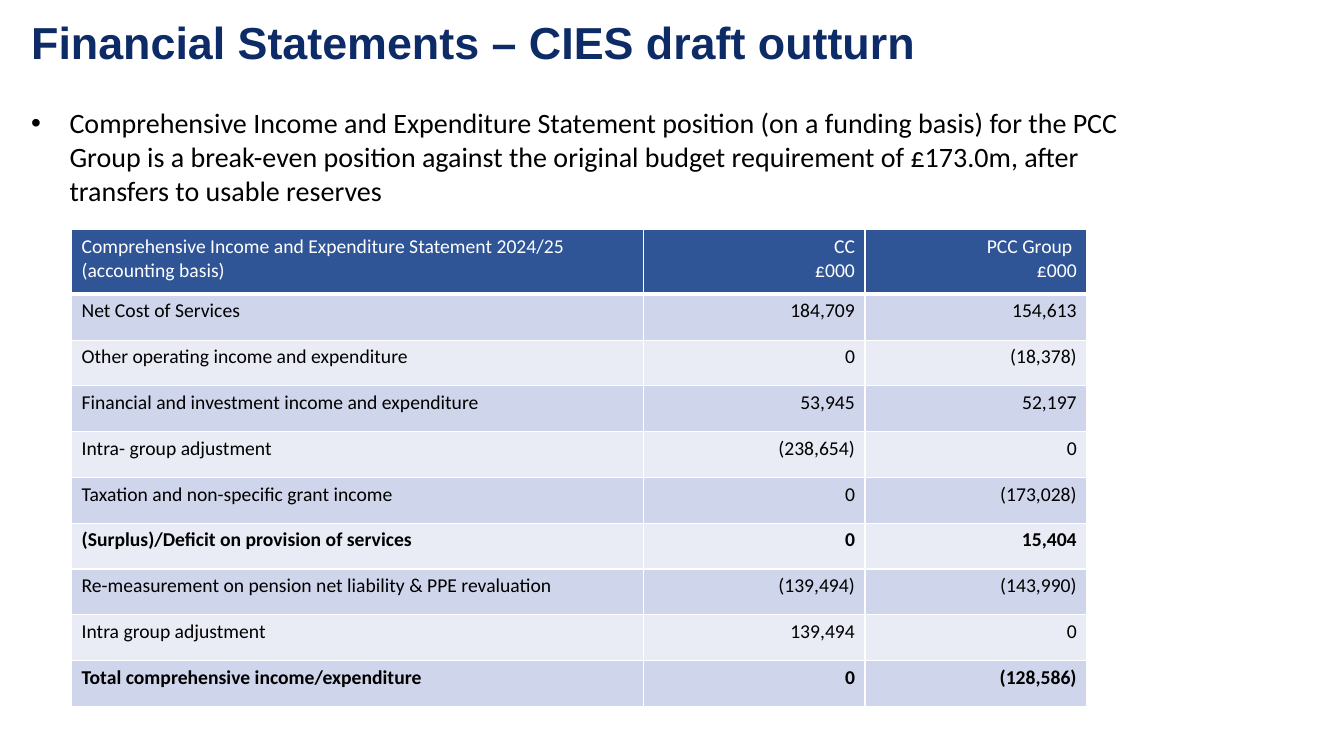
"""Build the CIES draft outturn slide with its income and expenditure table."""
from lxml.etree import SubElement
from pptx import Presentation
from pptx.dml.color import RGBColor
from pptx.enum.text import MSO_ANCHOR as Anchor, MSO_AUTO_SIZE as AutoSize, PP_ALIGN as Align
from pptx.oxml.ns import qn
from pptx.util import Inches, Pt


def color(value):
    return RGBColor.from_string(value)


def write(frame, text, size=14, font="Calibri", ink="000000", bold=False, align=Align.LEFT, spacing=1.0):
    frame.text = text
    for paragraph in frame.paragraphs:
        paragraph.alignment = align
        paragraph.line_spacing = spacing
        paragraph.space_before = Pt(0)
        for run in paragraph.runs:
            run.font.size = Pt(size)
            run.font.name = font
            run.font.bold = bold
            run.font.color.rgb = color(ink)


COLUMN_WIDTHS = [5.67, 2.2, 2.2]
HEADER_HEIGHT, TABLE_HEIGHT = 0.64, 4.73
HEADER_FILL, BAND_FILLS = "2F5597", ["E9EBF5", "CFD5EA"]
ROWS = [
    ("Comprehensive Income and Expenditure Statement 2024/25 (accounting basis)", "CC\n£000", "PCC Group \n£000"),
    ("Net Cost of Services", "184,709", "154,613"),
    ("Other operating income and expenditure", "0", "(18,378)"),
    ("Financial and investment income and expenditure", "53,945", "52,197"),
    ("Intra- group adjustment", "(238,654)", "0"),
    ("Taxation and non-specific grant income", "0", "(173,028)"),
    ("(Surplus)/Deficit on provision of services", "0", "15,404"),
    ("Re-measurement on pension net liability & PPE revaluation", "(139,494)", "(143,990)"),
    ("Intra group adjustment", "139,494", "0"),
    ("Total comprehensive income/expenditure", "0", "(128,586)"),
]
TOTAL_ROWS = {6, 9}

presentation = Presentation()
presentation.slide_width, presentation.slide_height = Inches(13.33), Inches(7.5)
slide = presentation.slides.add_slide(presentation.slide_layouts[1])
title, body = slide.placeholders

title.left, title.top, title.width, title.height = map(Inches, (0.21, 0.13, 11.04, 0.64))
title.text_frame.vertical_anchor = Anchor.MIDDLE
title.text_frame.auto_size = AutoSize.NONE
write(title.text_frame, "Financial Statements – CIES draft outturn",
      size=32, font="Arial", ink="0D2B67", bold=True, spacing=0.9)

body.left, body.top, body.width, body.height = map(Inches, (0.21, 1, 11.03, 1.11))
body.text_frame.vertical_anchor = Anchor.TOP
body.text_frame.auto_size = AutoSize.SHAPE_TO_FIT_TEXT
write(body.text_frame,
      "Comprehensive Income and Expenditure Statement position (on a funding basis) for the PCC Group "
      "is a break-even position against the original budget requirement of £173.0m, "
      "after transfers to usable reserves", size=20)
bullet_properties = body.text_frame.paragraphs[0]._p.get_or_add_pPr()
bullet_properties.set("marL", str(Inches(0.38)))
bullet_properties.set("indent", str(-Inches(0.38)))
SubElement(bullet_properties, qn("a:buFont"), typeface="Arial")
SubElement(bullet_properties, qn("a:buChar"), char="•")

table = slide.shapes.add_table(len(ROWS), len(COLUMN_WIDTHS), Inches(0.71), Inches(2.28),
                               Inches(sum(COLUMN_WIDTHS)), Inches(TABLE_HEIGHT)).table
for column, width in zip(table.columns, COLUMN_WIDTHS):
    column.width = Inches(width)

for row_index, values in enumerate(ROWS):
    header = row_index == 0
    body_height = (TABLE_HEIGHT - HEADER_HEIGHT) / (len(ROWS) - 1)
    table.rows[row_index].height = Inches(HEADER_HEIGHT if header else body_height)
    for column_index, text in enumerate(values):
        cell = table.cell(row_index, column_index)
        write(cell.text_frame, text, ink="FFFFFF" if header else "000000",
              bold=row_index in TOTAL_ROWS, align=Align.RIGHT if column_index else Align.LEFT)
        cell_properties = cell._tc.get_or_add_tcPr()
        for side in ("lnL", "lnR", "lnT", "lnB"):
            thickness = Pt(3 if header and side == "lnB" else 1)
            border = SubElement(cell_properties, qn(f"a:{side}"), w=str(thickness))
            SubElement(SubElement(border, qn("a:solidFill")), qn("a:srgbClr"), val="FFFFFF")
        cell.fill.solid()
        cell.fill.fore_color.rgb = color(HEADER_FILL if header else BAND_FILLS[row_index % 2])

presentation.save("out.pptx")
